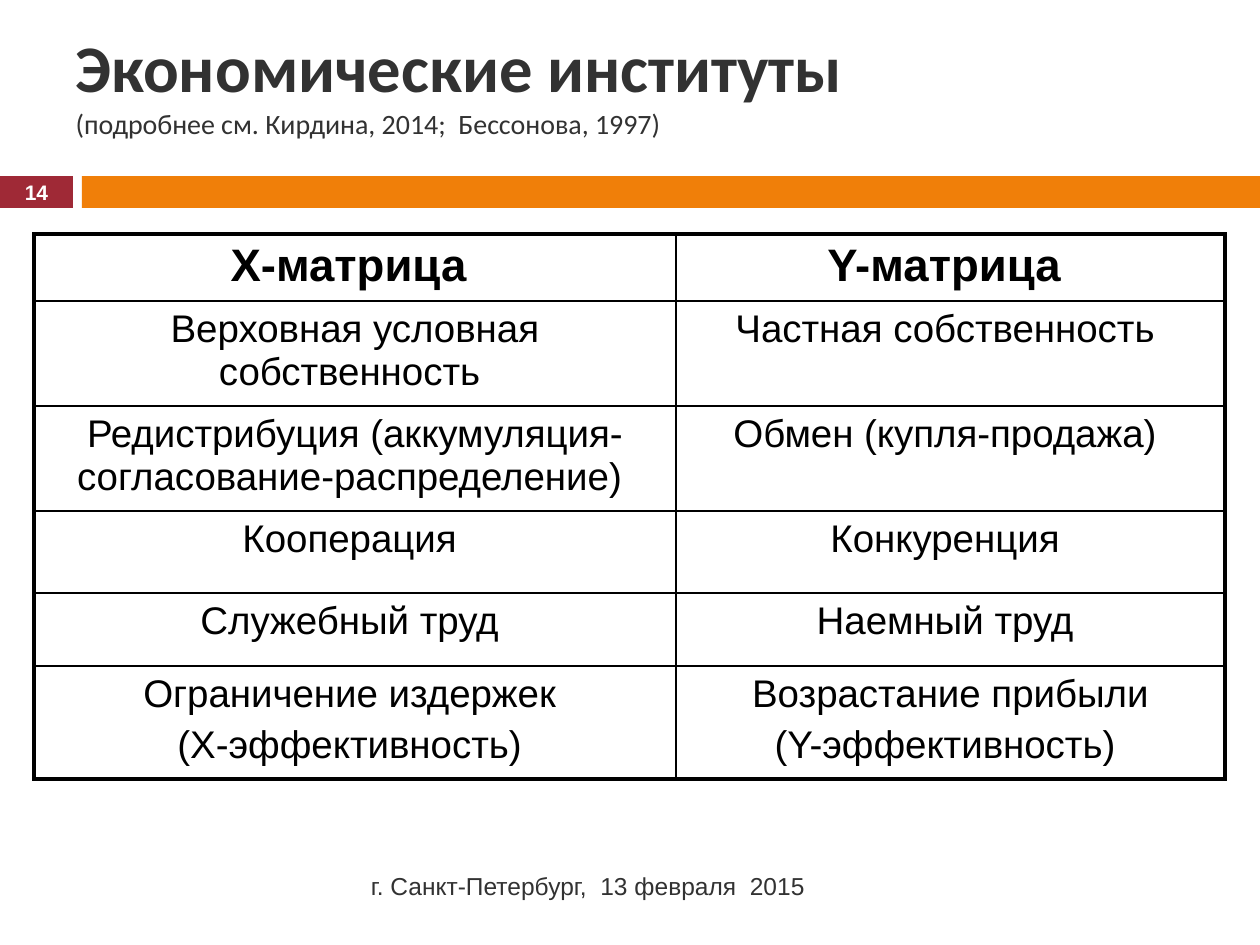
from lxml import etree
from pptx import Presentation
from pptx.dml.color import RGBColor
from pptx.enum.shapes import MSO_SHAPE
from pptx.enum.text import MSO_ANCHOR, MSO_AUTO_SIZE, PP_ALIGN
from pptx.oxml.ns import qn
from pptx.util import Pt

PX = 914400 / 126
RECT = MSO_SHAPE.RECTANGLE
MIDDLE = MSO_ANCHOR.MIDDLE
NO_AUTOFIT = MSO_AUTO_SIZE.NONE
LEFT, CENTER, RIGHT = PP_ALIGN.LEFT, PP_ALIGN.CENTER, PP_ALIGN.RIGHT
COLORS = {"text": "323232", "black": "000000", "white": "FFFFFF",
          "red": "9F2936", "orange": "F07F09"}
THIN, THICK = Pt(1), Pt(2.25)


def px(*lengths):
    return [round(length * PX) for length in lengths]


def write(paragraph, text, size, color="text", font="Arial", bold=False, align=CENTER):
    paragraph.alignment = align
    run = paragraph.add_run()
    run.text = text
    run.font.size = Pt(size)
    run.font.name = font
    run.font.bold = bold
    run.font.color.rgb = RGBColor.from_string(COLORS[color])


prs = Presentation()
prs.slide_width, prs.slide_height = px(1260, 945)
slide = prs.slides.add_slide(prs.slide_layouts[5])

# Band under the title
for left, width, color in ((0, 73, "red"), (82, 1178, "orange")):
    band = slide.shapes.add_shape(RECT, *px(left, 176, width, 32))
    band.shadow.inherit = False
    band.fill.solid()
    band.fill.fore_color.rgb = RGBColor.from_string(COLORS[color])
    band.line.fill.background()

# Title with the reference line
title = slide.shapes.title
title.left, title.top, title.width, title.height = px(63, 16, 1040, 134)
title.text_frame.auto_size = NO_AUTOFIT
title.text_frame.vertical_anchor = MIDDLE
heading = title.text_frame.paragraphs[0]
write(heading, "Экономические институты", 38, font="Calibri", bold=True, align=LEFT)
heading.add_line_break()
write(heading, "(подробнее см. Кирдина, 2014;  Бессонова, 1997)", 16,
      font="Calibri", align=LEFT)

# Footer and slide number
small_texts = (
    ((84, 861, 747, 50), "г. Санкт-Петербург,  13 февраля  2015  ",
     dict(size=14, align=RIGHT)),
    ((0, 175, 73, 34), "14", dict(size=12, color="white", bold=True)),
)
for box, text, style in small_texts:
    frame = slide.shapes.add_textbox(*px(*box)).text_frame
    frame.word_wrap = True
    frame.vertical_anchor = MIDDLE
    write(frame.paragraphs[0], text, **style)

# Comparison of the two matrices
matrices = (
    ("Х-матрица ", "Y-матрица "),
    ("Верховная условная собственность ", "Частная собственность "),
    ("Редистрибуция (аккумуляция-согласование-распределение) ",
     "Обмен (купля-продажа) "),
    ("Кооперация ", "Конкуренция "),
    ("Служебный труд ", "Наемный труд "),
    ("Ограничение издержек \n(Х-эффективность) ",
     "Возрастание прибыли\n(Y-эффективность) "),
)
column_widths = px(642, 549)
row_heights = px(64, 103, 103, 82, 73, 107)
last_row, last_column = len(row_heights) - 1, len(column_widths) - 1

table = slide.shapes.add_table(len(row_heights), len(column_widths),
                               *px(34, 234, 1191, 532)).table
table.first_row = table.horz_banding = False
for column, width in zip(table.columns, column_widths):
    column.width = width
for row, height in zip(table.rows, row_heights):
    row.height = height

for r, institutions in enumerate(matrices):
    for c, institution in enumerate(institutions):
        cell = table.cell(r, c)
        cell.fill.background()
        for i, line in enumerate(institution.split("\n")):
            frame = cell.text_frame
            paragraph = frame.add_paragraph() if i else frame.paragraphs[0]
            if i:
                paragraph.space_before = Pt(4.4)
            write(paragraph, line, 22 if r else 26, "black", bold=r == 0)

        # Thick outer frame, thin inner lines
        outer_sides = {"lnL": c == 0, "lnR": c == last_column,
                       "lnT": r == 0, "lnB": r == last_row}
        properties = cell._tc.get_or_add_tcPr()
        for position, (side, outer) in enumerate(outer_sides.items()):
            border = etree.Element(qn("a:" + side), w=str(THICK if outer else THIN))
            fill = etree.SubElement(border, qn("a:solidFill"))
            etree.SubElement(fill, qn("a:srgbClr"), val=COLORS["black"])
            properties.insert(position, border)

prs.save("out.pptx")
